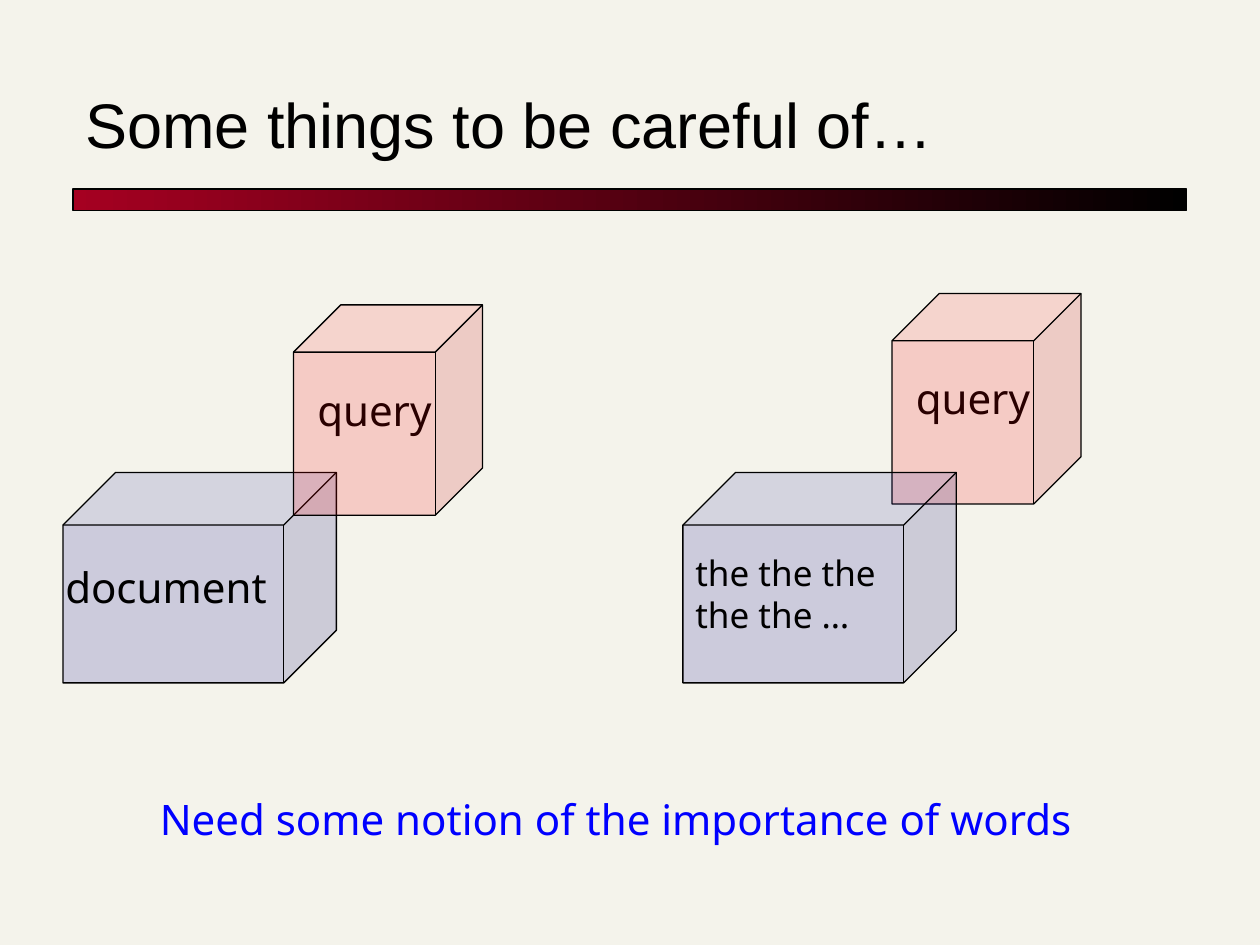
import pptx
import pptx.util
import pptx.dml.color
import pptx.enum.shapes
import pptx.enum.text
import pptx.oxml
import pptx.oxml.ns

Inches = pptx.util.Inches
RGB = pptx.dml.color.RGBColor
SHAPE = pptx.enum.shapes.MSO_SHAPE
ANCHOR = pptx.enum.text.MSO_ANCHOR

CREAM = RGB(0xF4, 0xF3, 0xEB)
BLACK = RGB(0, 0, 0)
CRIMSON = RGB(0xA5, 0x00, 0x21)
NAVY = RGB(0x00, 0x00, 0x90)
RED = RGB(0xFF, 0, 0)
BLUE = RGB(0, 0, 0xFF)


def add_text(slide, box, text, size=24, color=BLACK, font="Noto Sans",
             wrap=False, anchor=ANCHOR.TOP):
    frame = slide.shapes.add_textbox(*map(Inches, box)).text_frame
    frame.word_wrap = wrap
    frame.vertical_anchor = anchor
    frame.text = text
    for par in frame.paragraphs:
        for run in par.runs:
            run.font.size = pptx.util.Pt(size)
            run.font.name = font
            run.font.color.rgb = color


def add_block(slide, kind, box):
    shape = slide.shapes.add_shape(kind, *map(Inches, box))
    shape.shadow.inherit = False
    shape.line.color.rgb = BLACK
    shape.line.width = pptx.util.Pt(0.75)
    return shape


def add_cube(slide, box, color):
    cube = add_block(slide, SHAPE.CUBE, box)
    cube.fill.solid()
    cube.fill.fore_color.rgb = color
    # 16 % opacity
    tint = cube.fill._xPr.find(".//" + pptx.oxml.ns.qn("a:srgbClr"))
    alpha = pptx.oxml.parse_xml(
        '<a:alpha %s val="16000"/>' % pptx.oxml.ns.nsdecls("a"))
    tint.append(alpha)


def add_head(slide, left, top, width):
    # Gradient rule under the title
    bar = add_block(slide, SHAPE.RECTANGLE, (left, top + 1.25, width, 0.17))
    bar.fill.gradient()
    bar.fill.gradient_angle = 0
    for stop, color in zip(bar.fill.gradient_stops, (CRIMSON, BLACK)):
        stop.color.rgb = color
    add_text(slide, (left, top, width, 1.08), "Some things to be careful of…",
             36, font="Arial", wrap=True, anchor=ANCHOR.BOTTOM)


def add_query(slide, left, top):
    # The label lies behind the tinted cube
    add_text(slide, (left + 0.09, top + 0.58, 1.13, 0.5), "query")
    add_cube(slide, (left, top, 1.5, 1.67), RED)


def add_doc(slide, left, top):
    add_cube(slide, (left, top, 2.17, 1.67), NAVY)


def main():
    deck = pptx.Presentation()
    deck.slide_width, deck.slide_height = Inches(10), Inches(7.5)
    slide = deck.slides.add_slide(deck.slide_layouts[6])
    slide.background.fill.solid()
    slide.background.fill.fore_color.rgb = CREAM

    add_head(slide, 0.58, 0.25, 8.84)

    # Left pair: the document lies under the query
    add_doc(slide, 0.5, 3.75)
    add_query(slide, 2.33, 2.42)
    # Right pair: the document lies over the query
    add_query(slide, 7.08, 2.33)
    add_doc(slide, 5.42, 3.75)

    # Document labels
    add_text(slide, (0.42, 4.41, 1.84, 0.5), "document")
    add_text(slide, (5.42, 4.33, 1.69, 0.77), "the the the\nthe the …", 20)

    # Closing remark
    add_text(slide, (1.17, 6.25, 7.92, 0.5),
             "Need some notion of the importance of words",
             color=BLUE, wrap=True)

    deck.save("out.pptx")


if __name__ == "__main__":
    main()
